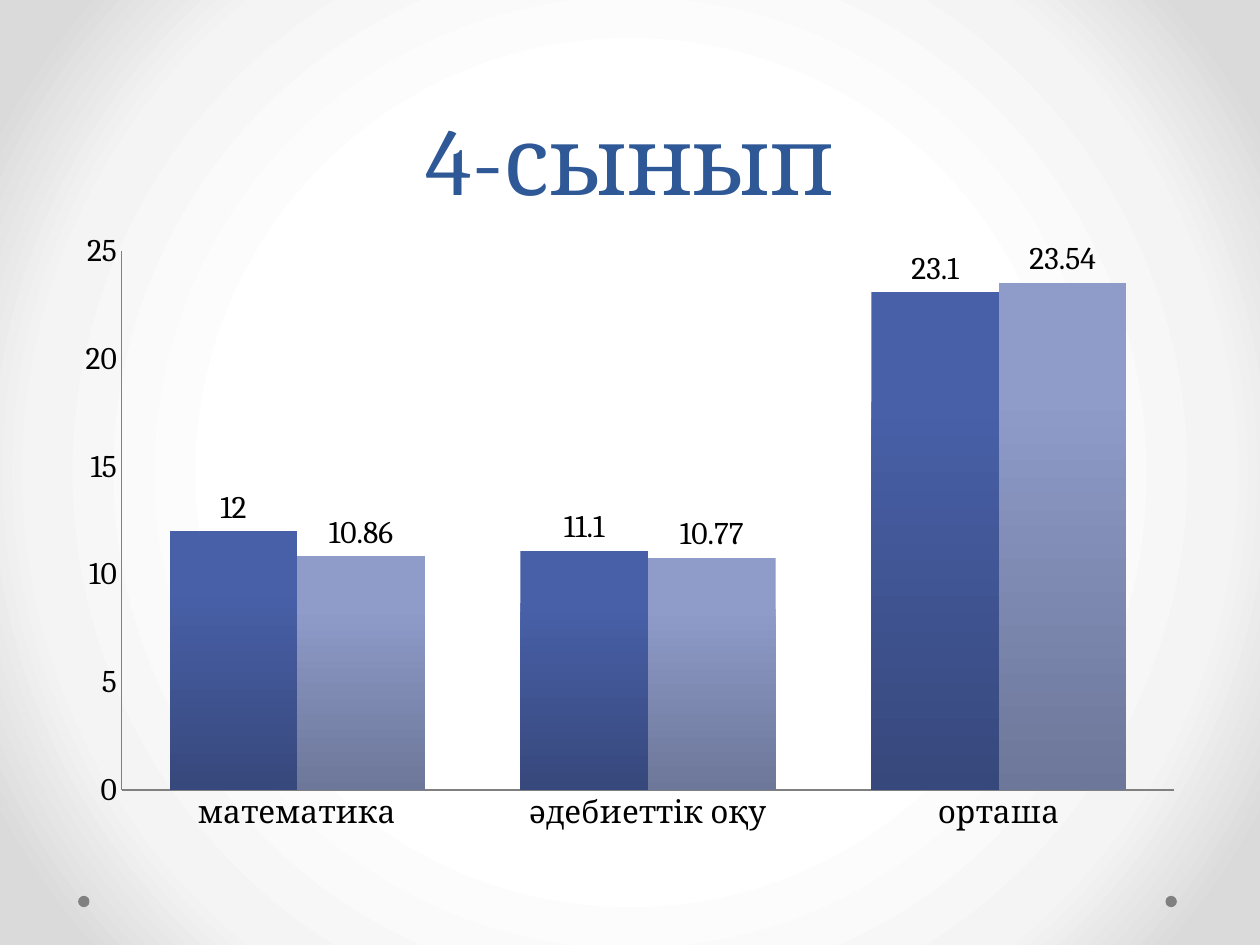
import pptx
import pptx.chart.data
import pptx.dml.color
import pptx.enum.chart
import pptx.enum.shapes
import pptx.enum.text
import pptx.oxml
import pptx.oxml.ns
import pptx.util

WIDE, HIGH = 10, 7.5
FONT = "Cambria"
HUES = {
    "title": "2F5897", "text": "000000", "axis": "808080", "dot": "808080",
    "white": "FFFFFF", "pale": "F4F4F4", "edge": "DADADA",
    "blue": "4860A8", "navy": "37487C", "lilac": "8F9BC9", "slate": "6C7799",
}
CATS = ["математика", "әдебиеттік оқу", "орташа"]
SERIES = [
    ("Series 1", (12, 11.1, 23.1), "blue", "navy"),
    ("Series 2", (10.86, 10.77, 23.54), "lilac", "slate"),
]
CENTRE = ('<a:path path="circle"><a:fillToRect l="50000" t="50000" '
          'r="50000" b="50000"/></a:path>')
DOWN = '<a:lin ang="5400000" scaled="0"/>'


def hue(name):
    return pptx.dml.color.RGBColor.from_string(HUES[name])


def place(left, top, width, height):
    """Turn shares of the slide's size into lengths."""
    shares = (left * WIDE, top * HIGH, width * WIDE, height * HIGH)
    return [pptx.util.Inches(share) for share in shares]


def shade(fill, root, stops, course):
    """Give a fill a gradient of (percent, hue name) stops."""
    fill.gradient()
    old = next(root.iter(pptx.oxml.ns.qn("a:gradFill")))
    marks = "".join(
        f'<a:gs pos="{pos * 1000}"><a:srgbClr val="{HUES[name]}"/></a:gs>'
        for pos, name in stops)
    new = pptx.oxml.parse_xml(
        f'<a:gradFill {pptx.oxml.ns.nsdecls("a")} rotWithShape="1">'
        f'<a:gsLst>{marks}</a:gsLst>{course}</a:gradFill>')
    old.getparent().replace(old, new)


def style(font, size, color):
    font.name = FONT
    font.size = pptx.util.Pt(size)
    font.color.rgb = hue(color)


def write(slide, text, box, size=18, color="text", lead=None):
    frame = slide.shapes.add_textbox(*place(*box)).text_frame
    frame.word_wrap = True
    frame.vertical_anchor = pptx.enum.text.MSO_ANCHOR.BOTTOM
    para = frame.paragraphs[0]
    para.alignment = pptx.enum.text.PP_ALIGN.CENTER
    if lead:
        para.line_spacing = pptx.util.Pt(lead)
    run = para.add_run()
    run.text = text
    style(run.font, size, color)


def dot(slide, left):
    size = 0.09
    shape = slide.shapes.add_shape(
        pptx.enum.shapes.MSO_SHAPE.OVAL,
        *place(left, 0.948, size / WIDE, size / HIGH))
    shape.shadow.inherit = False
    shape.fill.solid()
    shape.fill.fore_color.rgb = hue("dot")
    shape.line.fill.background()


def columns(slide, box):
    kinds = pptx.enum.chart
    data = pptx.chart.data.CategoryChartData()
    data.categories = CATS
    for name, vals, *_ in SERIES:
        data.add_series(name, vals)
    chart = slide.shapes.add_chart(
        kinds.XL_CHART_TYPE.COLUMN_CLUSTERED, *place(*box), data).chart
    chart.has_title = chart.has_legend = False
    style(chart.font, 18, "text")

    # Axes
    for axis in (chart.category_axis, chart.value_axis):
        axis.has_major_gridlines = False
        axis.major_tick_mark = kinds.XL_TICK_MARK.NONE
        axis.minor_tick_mark = kinds.XL_TICK_MARK.NONE
        axis.format.line.color.rgb = hue("axis")
    scale = chart.value_axis
    scale.minimum_scale, scale.maximum_scale, scale.major_unit = 0, 25, 5

    # Bars and their values
    plot = chart.plots[0]
    plot.gap_width, plot.overlap = 75, 0
    plot.vary_by_categories = False
    for bars, (*_, light, dark) in zip(plot.series, SERIES):
        shade(bars.format.fill, bars._element,
              [(0, light), (22, light), (100, dark)], DOWN)
        bars.invert_if_negative = False
        labels = bars.data_labels
        labels.show_value = True
        labels.position = kinds.XL_LABEL_POSITION.OUTSIDE_END
        style(labels.font, 18, "text")


def main():
    deck = pptx.Presentation()
    deck.slide_width = pptx.util.Inches(WIDE)
    deck.slide_height = pptx.util.Inches(HIGH)
    slide = deck.slides.add_slide(deck.slide_layouts[6])

    # Backdrop
    shade(slide.background.fill, slide._element,
          [(50, "white"), (76, "pale"), (92, "edge")], CENTRE)
    for left in (0.925, 0.062):
        dot(slide, left)

    # Title and chart
    write(slide, "4-сынып", (0.05, 0, 0.9, 0.2333),
          size=54, color="title", lead=58)
    columns(slide, (0.05, 0.2333, 0.9, 0.66))
    deck.save("out.pptx")


if __name__ == "__main__":
    main()
